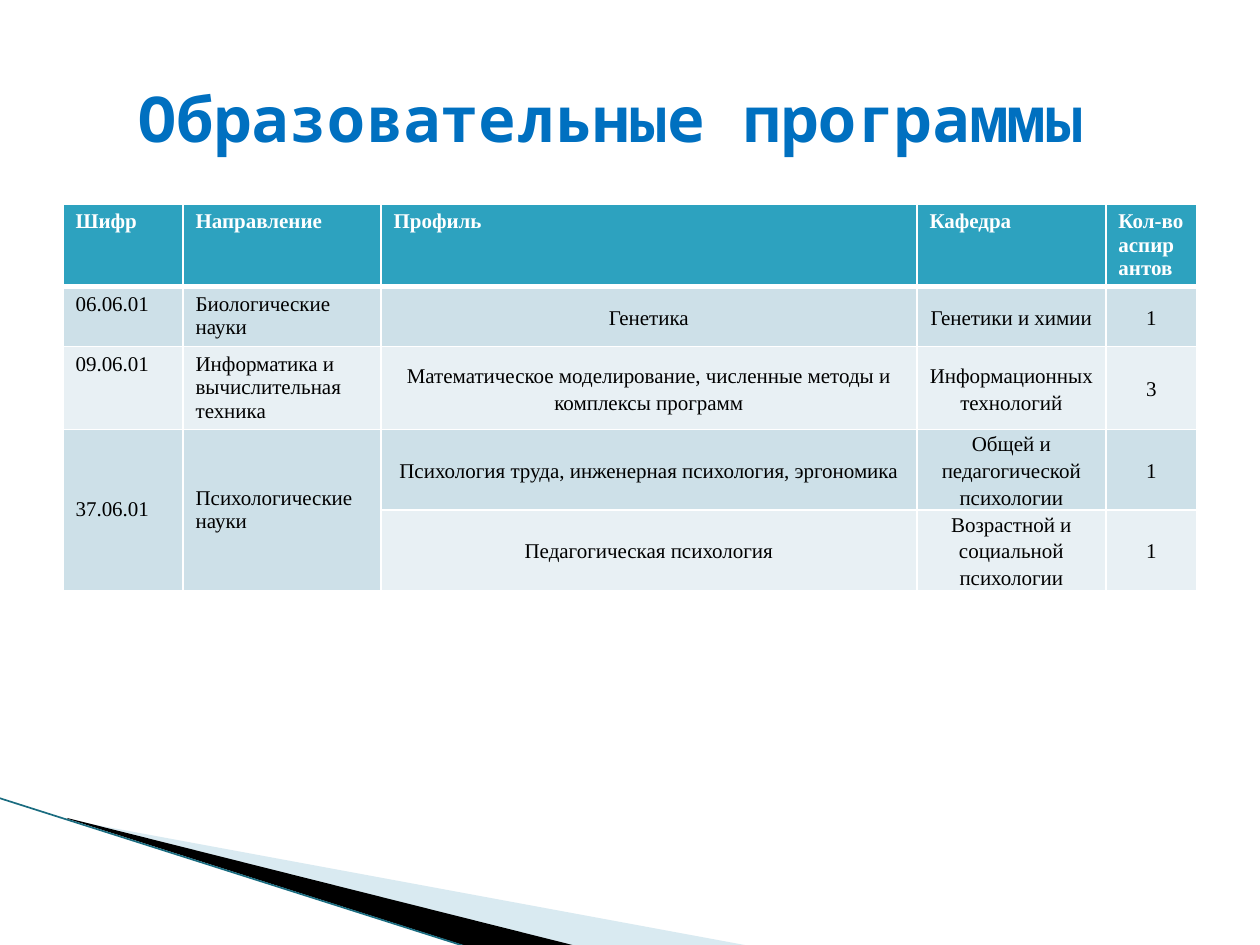
from lxml import etree
from pptx import Presentation, util as u
from pptx.dml.color import RGBColor
from pptx.enum import shapes, text
from pptx.oxml.ns import qn

PX = 914400 // 126
WHITE = RGBColor(0xFF, 0xFF, 0xFF)
BLACK = RGBColor(0, 0, 0)
BLUE = RGBColor(0x00, 0x70, 0xC0)
TEAL = RGBColor(0x2D, 0xA2, 0xBF)
DARK_TEAL = RGBColor(0x1A, 0x6C, 0x80)
SKY = RGBColor(0xA0, 0xCB, 0xDC)
BANDS = RGBColor(0xCD, 0xE0, 0xE8), RGBColor(0xE8, 0xF0, 0xF4)

TITLE = "Образовательные программы "
HEADER = ["Шифр", "Направление", "Профиль", "Кафедра", "Кол-во аспирантов"]
PROGRAMS = [
    ["06.06.01", "Биологические науки", "Генетика", "Генетики и химии", "1"],
    ["09.06.01", "Информатика и вычислительная техника",
     "Математическое моделирование, численные методы и комплексы программ",
     "Информационных технологий", "3"],
    ["37.06.01", "Психологические науки",
     "Психология труда, инженерная психология, эргономика",
     "Общей и педагогической психологии", "1"],
    [None, None, "Педагогическая психология",
     "Возрастной и социальной психологии", "1"],
]
COLUMNS = [120, 198, 536, 189, 91]
ROWS = [82, 60, 83, 80, 80]
WEDGES = [
    ([(69, 820), (750, 946), (575, 946), (69, 819)], SKY, 40),
    ([(67, 818), (576, 946), (469, 947), (68, 819)], BLACK, 100),
]


def px(*lengths):
    return [n * PX for n in lengths]


def add_run(p, words, font, size, color, bold):
    r = p.add_run()
    r.text = words
    r.font.name, r.font.size, r.font.bold = font, u.Pt(size), bold
    r.font.color.rgb = color


def add_wedge(s, points, color, opacity):
    builder = s.shapes.build_freeform(*points[0], scale=PX)
    builder.add_line_segments(points[1:])
    sp = builder.convert_to_shape()
    sp.shadow.inherit = False
    sp.fill.solid()
    sp.fill.fore_color.rgb = color
    sp.line.fill.background()
    if opacity < 100:
        clr = sp.fill._xPr.find(".//" + qn("a:srgbClr"))
        etree.SubElement(clr, qn("a:alpha"), val=str(opacity * 1000))


def set_borders(cell, bottom):
    """Draw white cell borders, 1 pt except for the bottom one."""
    tc_pr = cell._tc.get_or_add_tcPr()
    for i, (side, width) in enumerate(zip("LRTB", (1, 1, 1, bottom))):
        ln = etree.Element(qn("a:ln" + side), w=str(u.Pt(width)))
        fill = etree.SubElement(ln, qn("a:solidFill"))
        etree.SubElement(fill, qn("a:srgbClr"), val=str(WHITE))
        tc_pr.insert(i, ln)


def add_programs(s):
    grid = [HEADER] + PROGRAMS
    table = s.shapes.add_table(len(grid), len(HEADER),
                               *px(63, 204, sum(COLUMNS), sum(ROWS))).table
    for column, width in zip(table.columns, COLUMNS):
        column.width = width * PX
    for row, height in zip(table.rows, ROWS):
        row.height = height * PX
    for i, line in enumerate(grid):
        header = i == 0
        for j, words in enumerate(line):
            cell = table.cell(i, j)
            cell.fill.solid()
            cell.fill.fore_color.rgb = TEAL if header else BANDS[(i - 1) % 2]
            set_borders(cell, 3 if header else 1)
            if words is None:
                table.cell(i - 1, j).merge(cell)
                table.cell(i - 1, j).vertical_anchor = text.MSO_ANCHOR.MIDDLE
                continue
            p = cell.text_frame.paragraphs[0]
            add_run(p, words, "Times New Roman", 12,
                    WHITE if header else BLACK, header)
            if not header and j >= 2:
                cell.vertical_anchor = text.MSO_ANCHOR.MIDDLE
                cell.margin_left = cell.margin_right = 9 * PX
                cell.margin_top = cell.margin_bottom = 0
                p.alignment = text.PP_ALIGN.CENTER
                p.line_spacing = 1.15


def main():
    prs = Presentation()
    prs.slide_width, prs.slide_height = px(1260, 945)
    s = prs.slides.add_slide(prs.slide_layouts[6])

    for wedge in WEDGES:
        add_wedge(s, *wedge)
    edge = s.shapes.add_connector(shapes.MSO_CONNECTOR.STRAIGHT,
                                  *px(-1, 798, 467, 947))
    edge.line.color.rgb = DARK_TEAL
    edge.line.width = u.Pt(0.95)
    etree.SubElement(edge._element.spPr, qn("a:effectLst"))

    add_programs(s)

    tf = s.shapes.add_textbox(*px(63, 38, 1134, 158)).text_frame
    tf.word_wrap = True
    tf.vertical_anchor = text.MSO_ANCHOR.MIDDLE
    p = tf.paragraphs[0]
    p.alignment = text.PP_ALIGN.CENTER
    add_run(p, TITLE, "Noto Sans Mono", 36, BLUE, True)

    prs.save("out.pptx")


if __name__ == "__main__":
    main()
